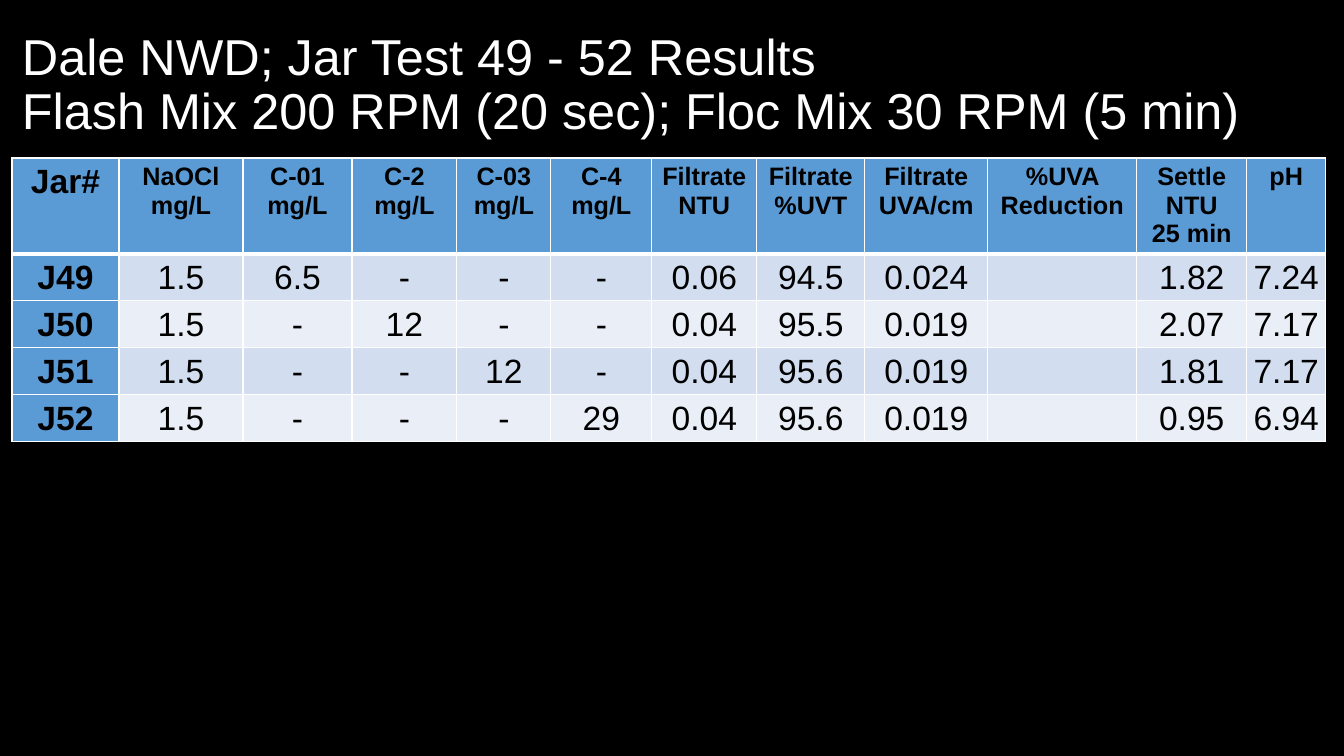
from dataclasses import dataclass

from lxml.etree import SubElement
from pptx import Presentation
from pptx.dml.color import RGBColor
from pptx.enum.text import MSO_ANCHOR, PP_ALIGN
from pptx.oxml.ns import qn
from pptx.util import Pt

PX = 12192000 / 1344


@dataclass(frozen=True)
class Theme:
    font: str = "Arial"
    back: str = "000000"
    title: str = "FFFFFF"
    text: str = "000000"
    border: str = "FFFFFF"
    accent: str = "5B9BD5"
    bands: tuple = ("D2DEEF", "EAEFF7")
    title_size: int = 36
    body_size: int = 24
    head_size: int = 18


def px(n):
    return round(n * PX)


class Deck:
    """Builds a themed slide from titles and tables measured in px."""

    def __init__(self, theme, width, height):
        self.theme = theme
        self.prs = Presentation()
        self.prs.slide_width, self.prs.slide_height = px(width), px(height)
        self.s = self.prs.slides.add_slide(self.prs.slide_layouts[6])
        fill = self.s.background.fill
        fill.solid()
        fill.fore_color.rgb = RGBColor.from_string(theme.back)

    def style(self, tf, size, color, bold=False):
        for p in tf.paragraphs:
            for r in p.runs:
                r.font.name = self.theme.font
                r.font.size = Pt(size)
                r.font.bold = bold
                r.font.color.rgb = RGBColor.from_string(color)

    def title(self, x, y, w, h, text):
        tf = self.s.shapes.add_textbox(px(x), px(y), px(w), px(h)).text_frame
        tf.word_wrap = True
        tf.vertical_anchor = MSO_ANCHOR.MIDDLE
        tf.text = text
        tf.paragraphs[0].line_spacing = 0.9
        self.style(tf, self.theme.title_size, self.theme.title)

    def borders(self, cell, top, bottom):
        tcPr = cell._tc.get_or_add_tcPr()
        for side, width in zip("LRTB", (1, 1, top, bottom)):
            ln = SubElement(tcPr, qn(f"a:ln{side}"), w=str(Pt(width)))
            SubElement(SubElement(ln, qn("a:solidFill")), qn("a:srgbClr"), val=self.theme.border)

    def cell(self, cell, text, row, col):
        t = self.theme
        head, label = row == 0, col == 0
        self.borders(cell, 3 if row == 1 else 1, 3 if head else 1)
        cell.fill.solid()
        color = t.accent if head or label else t.bands[(row - 1) % 2]
        cell.fill.fore_color.rgb = RGBColor.from_string(color)
        cell.margin_bottom = 0
        if not (head or label):
            cell.vertical_anchor = MSO_ANCHOR.MIDDLE
            cell.margin_left = cell.margin_right = cell.margin_top = px(1)
        cell.text_frame.text = text
        for p in cell.text_frame.paragraphs:
            p.alignment = PP_ALIGN.CENTER
        size = t.head_size if head and not label else t.body_size
        self.style(cell.text_frame, size, t.text, head or label)

    def table(self, x, y, widths, heights, rows):
        shape = self.s.shapes.add_table(
            len(rows), len(widths), px(x), px(y), px(sum(widths)), px(sum(heights)))
        table = shape.table
        for column, width in zip(table.columns, widths):
            column.width = px(width)
        for i, (row, height) in enumerate(zip(rows, heights)):
            table.rows[i].height = px(height)
            for j, text in enumerate(row):
                self.cell(table.cell(i, j), text, i, j)


def main():
    deck = Deck(Theme(), 1344, 756)
    deck.title(12, 13, 1313, 146,
               "Dale NWD; Jar Test 49 - 52 Results\v"
               "Flash Mix 200 RPM (20 sec); Floc Mix 30 RPM (5 min)")
    head = ["Jar#", "NaOCl\nmg/L", "C-01\nmg/L", "C-2\nmg/L", "C-03\nmg/L", "C-4\nmg/L",
            "Filtrate\nNTU", "Filtrate\n%UVT", "Filtrate\nUVA/cm", "%UVA Reduction",
            "Settle\nNTU\n25 min", "pH"]
    jars = [
        ["J49", "1.5", "6.5", "-", "-", "-", "0.06", "94.5", "0.024", "", "1.82", "7.24"],
        ["J50", "1.5", "-", "12", "-", "-", "0.04", "95.5", "0.019", "", "2.07", "7.17"],
        ["J51", "1.5", "-", "-", "12", "-", "0.04", "95.6", "0.019", "", "1.81", "7.17"],
        ["J52", "1.5", "-", "-", "-", "29", "0.04", "95.6", "0.019", "", "0.95", "6.94"],
    ]
    widths = [107, 124, 109, 105, 94, 101, 105, 108, 123, 149, 110, 79]
    deck.table(12, 158, widths, [95] + [47] * len(jars), [head] + jars)
    deck.prs.save("out.pptx")


if __name__ == "__main__":
    main()
